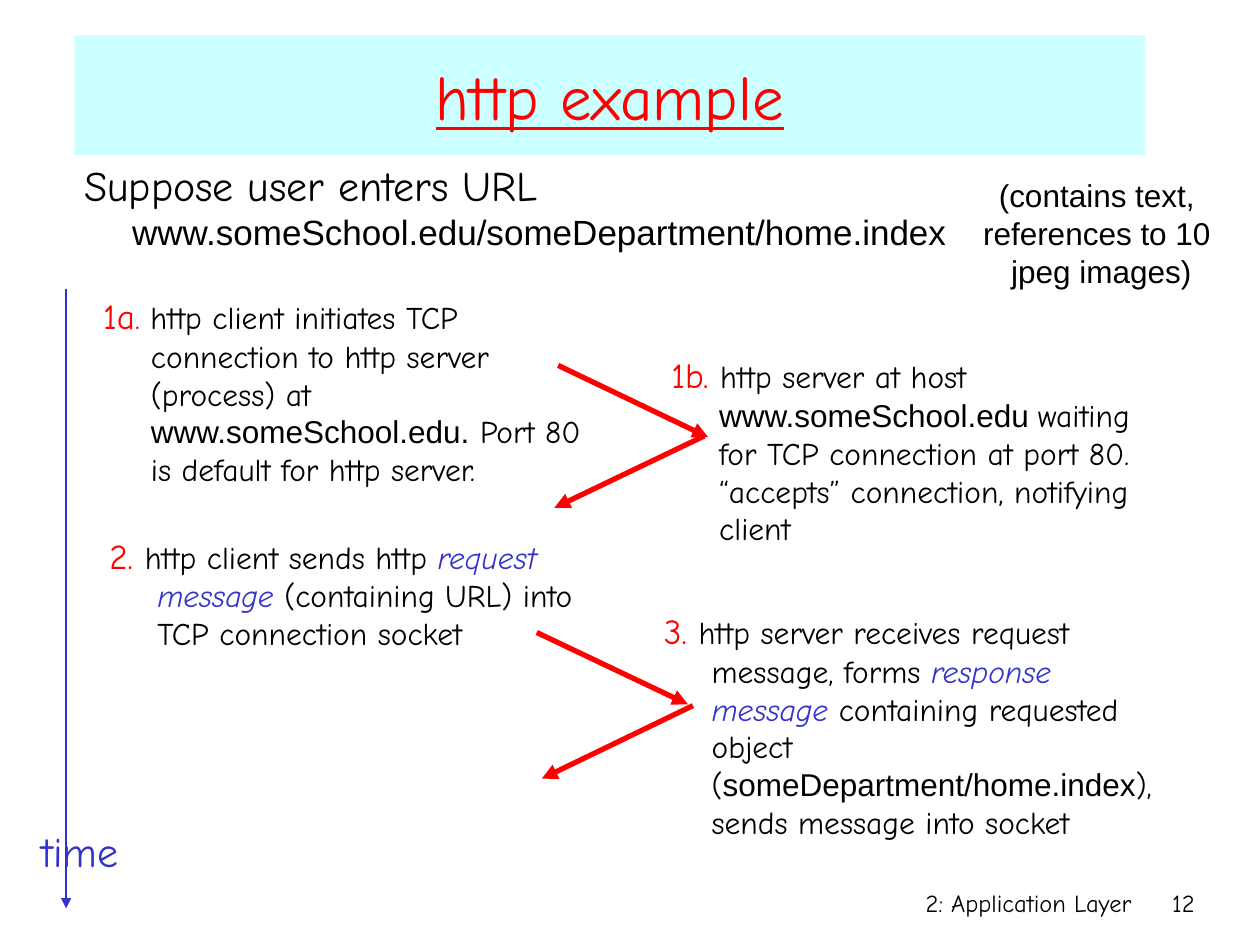
"""Builds the "http example" slide: a client and server exchange along a time line."""
from lxml import etree
from pptx import Presentation
from pptx import util as u
from pptx.dml.color import RGBColor
from pptx.enum import shapes, text
from pptx.oxml import ns

COLORS = {"red": "FF0000", "blue": "3333CC", "black": "000000", "banner": "CCFFFF"}
COMIC, ARIAL = "Comic Neue", "Arial"
LABEL = {"size": u.Pt(20), "color": "red"}
PLAIN = {"size": u.Pt(18)}
TERM = {**PLAIN, "color": "blue", "italic": True}
ADDRESS = {**PLAIN, "name": ARIAL}
FOOTER = {"size": u.Pt(14)}
HANGING = u.Inches(0.38)
STEP_WIDTH = 4.17

INTRO = [
    ("Suppose user enters URL ", {"size": u.Pt(24)}),
    ("www.someSchool.edu/someDepartment/home.index", {"size": u.Pt(20), "name": ARIAL}),
]
STEPS = [
    ((0.72, 2.29, STEP_WIDTH, 2.08), [
        ("1a", LABEL),
        (".", {**PLAIN, "color": "red"}),
        (" http client initiates TCP connection to http server (process) at ", PLAIN),
        ("www.someSchool.edu.", ADDRESS),
        (" Port 80 is default for http server.", PLAIN),
    ]),
    ((0.77, 4.19, STEP_WIDTH, 1.18), [
        ("2. ", LABEL),
        ("http client sends http ", PLAIN),
        ("request message", TERM),
        (" (containing URL) into TCP connection socket", PLAIN),
    ]),
    ((5.23, 2.76, STEP_WIDTH, 1.65), [
        ("1b. ", LABEL),
        ("http server at host ", PLAIN),
        ("www.someSchool.edu ", ADDRESS),
        ("waiting for TCP connection at port 80. “accepts” connection, notifying client", PLAIN),
    ]),
    ((5.17, 4.79, STEP_WIDTH, 1.97), [
        ("3. ", LABEL),
        ("http server receives request message, forms ", PLAIN),
        ("response message", TERM),
        (" containing requested object (", PLAIN),
        ("someDepartment/home.index", ADDRESS),
        ("), sends message into socket", PLAIN),
    ]),
]
MESSAGES = [
    (4.43, 2.9, 5.62, 3.47),
    (5.59, 3.46, 4.4, 4.03),
    (4.26, 5.02, 5.46, 5.59),
    (5.5, 5.6, 4.3, 6.18),
]


def inches(values):
    """Return the given numbers as lengths."""
    return [u.Inches(value) for value in values]


def write_runs(paragraph, runs):
    """Add runs of (wording, format values) to a paragraph."""
    for wording, values in runs:
        run = paragraph.add_run()
        run.text = wording
        formats = {"name": COMIC, "color": "black", **values}
        run.font.color.rgb = RGBColor.from_string(COLORS[formats.pop("color")])
        for attribute, value in formats.items():
            setattr(run.font, attribute, value)


def add_text(slide, box, lines, align=text.PP_ALIGN.LEFT, wrap=True):
    """Place a text box holding one paragraph per list of runs."""
    frame = slide.shapes.add_textbox(*inches(box)).text_frame
    frame.word_wrap = wrap
    for index, runs in enumerate(lines):
        paragraph = frame.add_paragraph() if index else frame.paragraphs[0]
        paragraph.alignment = align
        write_runs(paragraph, runs)
    return frame


def add_hanging_text(slide, box, runs):
    """Place a paragraph whose later lines are indented."""
    paragraph = add_text(slide, box, [runs]).paragraphs[0]
    paragraph.space_before = u.Pt(4)
    properties = paragraph._p.get_or_add_pPr()
    for attribute, value in {"marL": HANGING, "indent": -HANGING}.items():
        properties.set(attribute, str(int(value)))


def add_arrow(slide, ends, color, width):
    """Draw a straight arrow from the first point to the second."""
    arrow = slide.shapes.add_connector(shapes.MSO_CONNECTOR.STRAIGHT, *inches(ends))
    arrow.line.color.rgb = RGBColor.from_string(COLORS[color])
    arrow.line.width = u.Pt(width)
    etree.SubElement(arrow.line._get_or_add_ln(), ns.qn("a:tailEnd"), type="triangle")
    etree.SubElement(arrow._element.spPr, ns.qn("a:effectLst"))


def add_title(slide, box):
    """Place the title banner."""
    banner = slide.shapes.add_shape(shapes.MSO_SHAPE.RECTANGLE, *inches(box))
    banner.shadow.inherit = False
    banner.fill.solid()
    banner.fill.fore_color.rgb = RGBColor.from_string(COLORS["banner"])
    banner.line.fill.background()
    banner.text_frame.vertical_anchor = text.MSO_ANCHOR.MIDDLE
    paragraph = banner.text_frame.paragraphs[0]
    paragraph.alignment = text.PP_ALIGN.CENTER
    title = {"size": u.Pt(36), "color": "red", "underline": True}
    write_runs(paragraph, [("http example", title)])


def add_time_line(slide, box):
    """Draw the downward time arrow and its label near the foot."""
    left, top, width, height = box
    middle = left + width / 2 - 0.11
    add_arrow(slide, (middle, top, middle, top + height), "blue", 1.5)
    label = [("time", {"size": u.Pt(24), "color": "blue"})]
    add_text(slide, (left, top + height - 0.71, width, 0.5), [label],
             text.PP_ALIGN.CENTER, wrap=False)


def add_footer(slide, box):
    """Place the chapter name and the page number side by side."""
    left, top, width, height = box
    number_width = 0.5
    chapter_width = width - number_width
    for wording, start, extent in (
        ("2: Application Layer", left, chapter_width),
        ("12", left + chapter_width, number_width),
    ):
        add_text(slide, (start, top, extent, height), [[(wording, FOOTER)]],
                 text.PP_ALIGN.RIGHT)


def add_page_note(slide, box):
    """Place the centred note on what the page contains."""
    lines = ("(contains text, ", "references to 10 ", "jpeg images)")
    add_text(slide, box, [[(line, ADDRESS)] for line in lines],
             text.PP_ALIGN.CENTER, wrap=False)


def main():
    """Build and save the presentation."""
    presentation = Presentation()
    presentation.slide_width, presentation.slide_height = inches((10, 7.5))
    slide = presentation.slides.add_slide(presentation.slide_layouts[6])
    add_footer(slide, (5.92, 7, 3.66, 0.5))
    add_title(slide, (0.59, 0.28, 8.5, 0.95))
    add_hanging_text(slide, (0.57, 1.22, 9.12, 0.51), INTRO)
    for box, runs in STEPS:
        add_hanging_text(slide, box, runs)
    for ends in MESSAGES:
        add_arrow(slide, ends, "red", 3)
    add_time_line(slide, (0.19, 2.29, 0.89, 4.92))
    add_page_note(slide, (7.7, 1.35, 2.08, 1))
    presentation.save("out.pptx")


if __name__ == "__main__":
    main()
